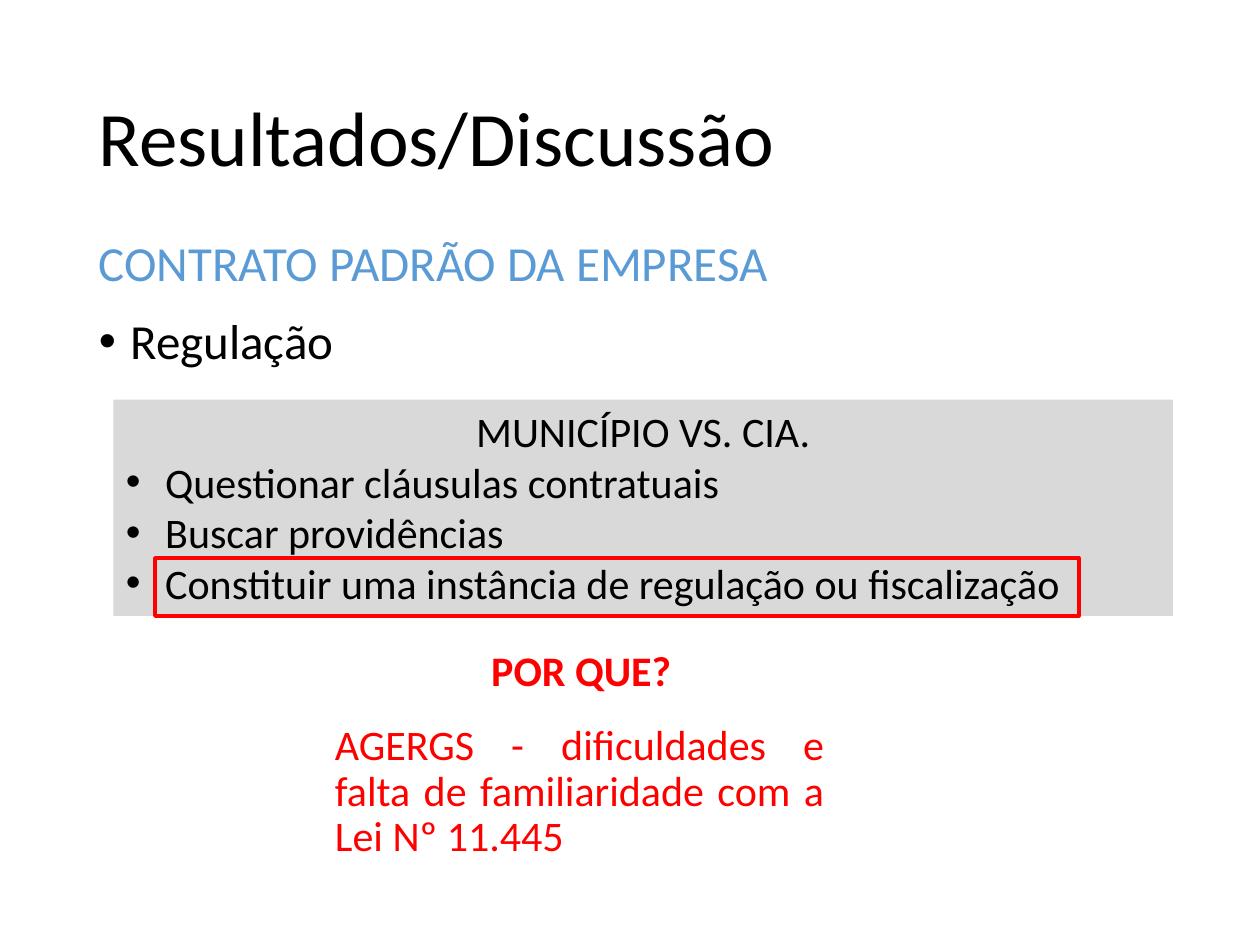
from pptx import Presentation
from pptx.dml.color import RGBColor
from pptx.enum import shapes, text
from pptx.oxml import parse_xml
from pptx.oxml.ns import nsdecls
from pptx.util import Pt

THEME = {
    "font": "Calibri",
    "black": "000000", "blue": "5B9BD5", "red": "FF0000", "gray": "D9D9D9",
    "title": 44, "body": 28, "detail": 24,
    "outline": 2.25,
}
ALIGN = text.PP_ALIGN
MARGIN, CONTENT_WIDTH = 49.5, 620.5

TEXTS = [
    {"at": (MARGIN, 28.75, CONTENT_WIDTH, 104.4), "lines": ["Resultados/Discussão"],
     "size": "title", "color": "black", "spacing": 0.9, "anchor": text.MSO_ANCHOR.MIDDLE},
    {"at": (MARGIN, 177.6, CONTENT_WIDTH, 38.2), "lines": ["Regulação"],
     "size": "body", "color": "black", "spacing": 0.9, "before": 10,
     "align": ALIGN.JUSTIFY, "indent": 18},
    {"at": (MARGIN, 133.2, CONTENT_WIDTH, 45), "lines": ["CONTRATO PADRÃO DA EMPRESA"],
     "size": "body", "color": "blue", "spacing": 0.9, "before": 10},
    {"at": (184.3, 410.4, 293.8, 87.8),
     "lines": ["AGERGS - dificuldades e falta de familiaridade com a Lei Nº 11.445"],
     "size": "detail", "color": "red", "spacing": 0.9, "before": 5, "align": ALIGN.JUSTIFY},
    {"at": (273.6, 365, 128.9, 36), "lines": ["POR QUE?"],
     "size": "detail", "color": "red", "bold": True},
]
PANEL_AT = (64.8, 228.4, 605.5, 123.6)
PANEL_HEADING = "MUNICÍPIO VS. CIA."
PANEL_ITEMS = [
    "Questionar cláusulas contratuais",
    "Buscar providências",
    "Constituir uma instância de regulação ou fiscalização",
]
HIGHLIGHT_AT = (88.6, 318.9, 527.8, 33.1)


def rgb(name):
    return RGBColor.from_string(THEME[name])


def add_bullet(para, indent):
    props = para._p.get_or_add_pPr()
    props.set("marL", str(Pt(indent)))
    props.set("indent", str(-Pt(indent)))
    props.append(parse_xml(f'<a:buFont {nsdecls("a")} typeface="Arial"/>'))
    props.append(parse_xml(f'<a:buChar {nsdecls("a")} char="•"/>'))


def write(box, lines, size, color, spacing=None, before=0, align=ALIGN.LEFT,
          indent=0, bold=False, anchor=text.MSO_ANCHOR.TOP):
    frame = box.text_frame
    frame.text = "\n".join(lines)
    frame.word_wrap = True
    frame.vertical_anchor = anchor
    for para in frame.paragraphs:
        para.alignment = align
        para.line_spacing = spacing
        para.space_before = Pt(before)
        if indent:
            add_bullet(para, indent)
        for span in para.runs:
            span.font.name = THEME["font"]
            span.font.size = Pt(THEME[size])
            span.font.bold = bold
            span.font.color.rgb = rgb(color)


def add_rectangle(page, at):
    box = page.shapes.add_shape(shapes.MSO_SHAPE.RECTANGLE, *map(Pt, at))
    box.shadow.inherit = False
    return box


def add_panel(page):
    panel = add_rectangle(page, PANEL_AT)
    panel.fill.solid()
    panel.fill.fore_color.rgb = rgb("gray")
    panel.line.fill.background()
    write(panel, [PANEL_HEADING, *PANEL_ITEMS], "detail", "black")
    heading, *items = panel.text_frame.paragraphs
    heading.alignment = ALIGN.CENTER
    for item in items:
        add_bullet(item, 22.5)


def add_highlight(page):
    frame = add_rectangle(page, HIGHLIGHT_AT)
    frame.fill.background()
    frame.line.color.rgb = rgb("red")
    frame.line.width = Pt(THEME["outline"])


def main():
    deck = Presentation()
    deck.slide_width, deck.slide_height = Pt(720), Pt(540)
    page = deck.slides.add_slide(deck.slide_layouts[6])
    for entry in TEXTS:
        style = {key: value for key, value in entry.items() if key != "at"}
        write(page.shapes.add_textbox(*map(Pt, entry["at"])), **style)
    add_panel(page)
    add_highlight(page)
    deck.save("out.pptx")


if __name__ == "__main__":
    main()
